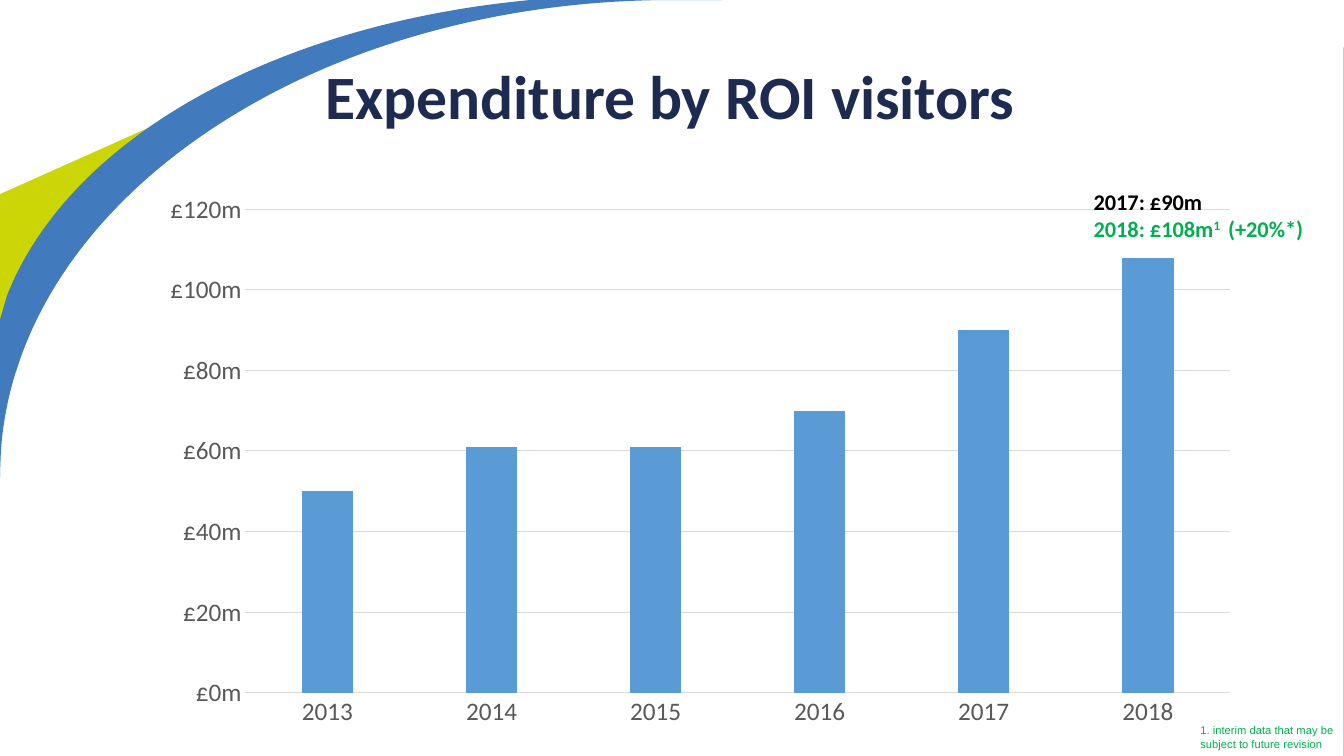
from dataclasses import dataclass

from pptx import Presentation
from pptx.chart.data import CategoryChartData as Data
from pptx.dml.color import RGBColor as Rgb
from pptx.enum.chart import XL_CHART_TYPE as Kind, XL_TICK_MARK as Tick
from pptx.enum.text import MSO_ANCHOR as Anchor, MSO_AUTO_SIZE as Fit
from pptx.oxml.ns import qn
from pptx.util import Emu, Inches, Pt

CELL = Inches(0.1)
COLS, ROWS = 133.33, 75
BLUE, LIME, NAVY, GREEN = "417ABD", "CCD607", "1E2B50", "00B050"
BLACK, GREY, RULE, BAR = "000000", "595959", "D9D9D9", "5B9BD5"


@dataclass
class Part:
    text: str
    color: str
    raised: bool = False


@dataclass
class Label:
    box: tuple[float, ...]
    lines: list[list[Part]]
    size: int
    font: str = "Calibri"
    bold: bool = True
    title: bool = False


@dataclass
class Swoosh:
    color: str
    loops: list[list[tuple[float, ...]]]


SWOOSHES = [
    Swoosh(LIME, [[
        (25.2, 8), (26, 9.8), (25.4, 10.1), (14, 16.5, 5.6, 25.3, 2, 35.6),
        (1.6, 36.9), (-0.1, 33.2), (-0.1, 19.3)]]),
    Swoosh(BLUE, [
        [(133.3, 4.7), (COLS, 4.7), (COLS, 75), (133.3, 75), (133.3, 15.9)],
        [(70.2, -0.1), (70.8, -0.1), (71.6, 0), (66.7, 0),
         (31, 0, 1.9, 19.8, 0.1, 44.6), (0, 46.9), (0, 47.4), (-0.1, 47.2),
         (0, 31.7), (0.7, 29.3), (6.9, 13.7, 27.2, 2.4, 52.6, 0),
         (54.9, -0.1)]]),
]

LABELS = [
    Label((31.3, 3.3, 92.8, 13.1),
          [[Part("Expenditure by ROI visitors", NAVY)]], 44, title=True),
    Label((107.5, 18.14, 23.9, 6.4), [
        [Part("2017: £90m", BLACK)],
        [Part("2018: £108m", GREEN), Part("1 ", GREEN, True),
         Part(" (+20%*)", GREEN)]], 16),
    Label((118.1, 71.3, 17, 3.7),
          [[Part("1. interim data that may be subject to future revision",
                 GREEN)]], 8, "Arial", False),
]

SPEND = {"2013": 50, "2014": 61, "2015": 61, "2016": 70, "2017": 90, "2018": 108}


def span(*cells: float) -> list[Emu]:
    return [Emu(round(cell * CELL)) for cell in cells]


def paint(target, color: str) -> None:
    target.solid()
    target.fore_color.rgb = Rgb.from_string(color)


def style(font, name: str, size: int, color: str, bold: bool = False) -> None:
    font.name, font.size, font.bold = name, Pt(size), bold
    paint(font.fill, color)


def rule(line) -> None:
    paint(line.fill, RULE)
    line.width = Pt(0.75)


def pairs(step: tuple[float, ...]) -> list[list[Emu]]:
    return [span(*step[i:i + 2]) for i in range(0, len(step), 2)]


def bend(shape, steps: list[tuple[float, ...]]) -> None:
    nodes = iter(list(shape._element.iter(qn("a:lnTo"))))
    for step in steps:
        node = next(nodes)
        if len(step) == 6:
            node.tag = qn("a:cubicBezTo")
            for spare in (next(nodes), next(nodes)):
                node.append(spare[0])
                spare.getparent().remove(spare)


def add_swoosh(slide, swoosh: Swoosh) -> None:
    pen = slide.shapes.build_freeform(*span(*swoosh.loops[0][0]))
    for index, loop in enumerate(swoosh.loops):
        if index:
            pen.move_to(*span(*loop[0]))
        dots = [dot for step in loop[1:] for dot in pairs(step)]
        pen.add_line_segments(dots, close=True)
    shape = pen.convert_to_shape()
    bend(shape, [step for loop in swoosh.loops for step in loop[1:]])
    shape.shadow.inherit = False
    paint(shape.fill, swoosh.color)
    shape.line.fill.background()


def add_label(slide, label: Label) -> None:
    frame = slide.shapes.add_textbox(*span(*label.box)).text_frame
    frame.word_wrap = True
    frame.auto_size = Fit.NONE if label.title else Fit.SHAPE_TO_FIT_TEXT
    frame.vertical_anchor = Anchor.MIDDLE if label.title else Anchor.TOP
    frame.text = "\n".join(line[0].text for line in label.lines)
    for para, line in zip(frame.paragraphs, label.lines):
        if label.title:
            para.line_spacing = 0.9
        for part in line[1:]:
            para.add_run().text = part.text
        for run, part in zip(para.runs, line):
            style(run.font, label.font, label.size, part.color, label.bold)
            if part.raised:
                run._r.get_or_add_rPr().set("baseline", "30000")


def add_bars(slide) -> None:
    data = Data()
    data.categories = list(SPEND)
    data.add_series("Series 1", list(SPEND.values()))
    box = span(14.7, 18.14, 109.5, 55.1)
    chart = slide.shapes.add_chart(Kind.COLUMN_CLUSTERED, *box, data).chart
    chart.has_legend = chart.has_title = False
    style(chart.font, "Calibri", 10, BLACK)
    for axis in (chart.category_axis, chart.value_axis):
        axis.major_tick_mark = axis.minor_tick_mark = Tick.NONE
        style(axis.tick_labels.font, "Calibri", 18, GREY)
    rule(chart.category_axis.format.line)
    worth = chart.value_axis
    worth.minimum_scale, worth.maximum_scale, worth.major_unit = 0, 120, 20
    worth.format.line.fill.background()
    rule(worth.major_gridlines.format.line)
    worth.tick_labels.number_format = '"£"#,##0"m"'
    worth.tick_labels.number_format_is_linked = False
    plot = chart.plots[0]
    plot.gap_width, plot.overlap, plot.vary_by_categories = 219, -27, False
    paint(plot.series[0].format.fill, BAR)


def main() -> None:
    """Build the visitor spending slide and save it."""
    deck = Presentation()
    deck.slide_width, deck.slide_height = span(COLS, ROWS)
    slide = deck.slides.add_slide(deck.slide_layouts[6])
    for swoosh in SWOOSHES:
        add_swoosh(slide, swoosh)
    add_label(slide, LABELS[0])
    add_bars(slide)
    for label in LABELS[1:]:
        add_label(slide, label)
    deck.save("out.pptx")


if __name__ == "__main__":
    main()
